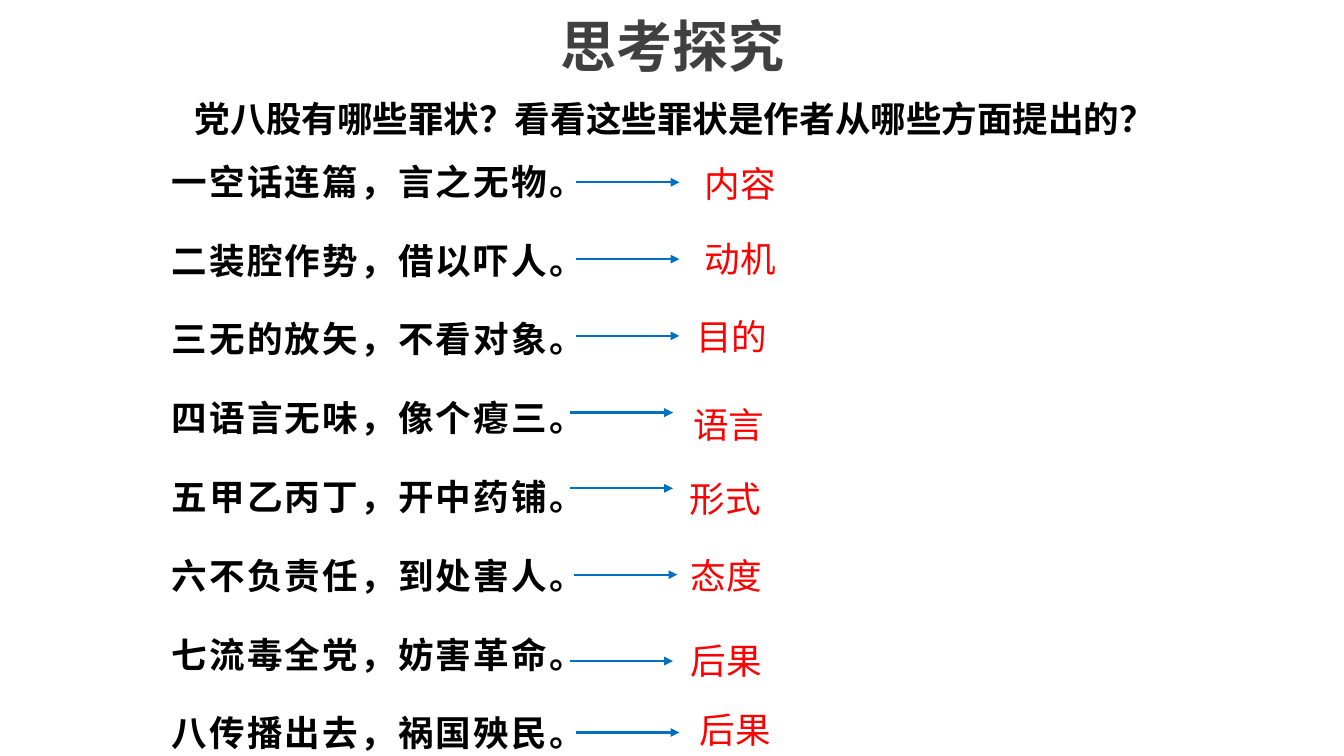
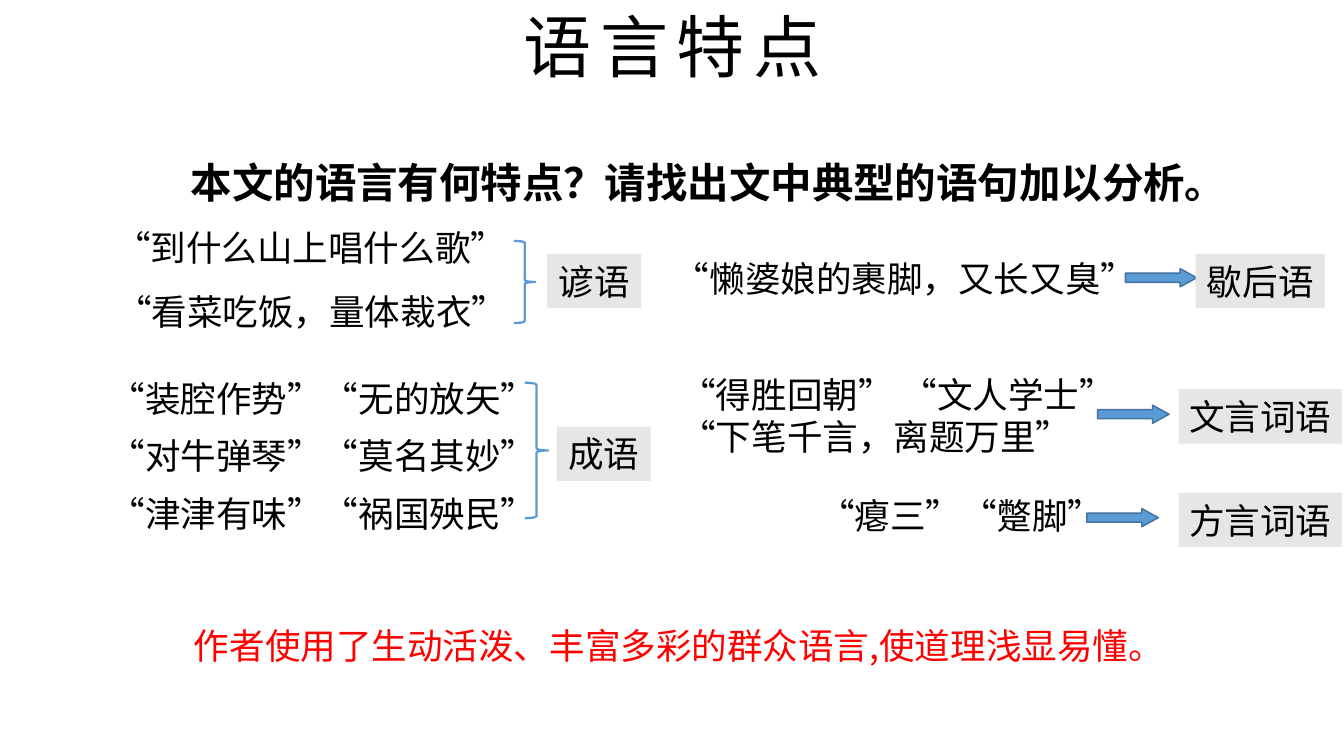
from lxml import etree
from pptx import Presentation
from pptx.dml.color import RGBColor
from pptx.enum.lang import MSO_LANGUAGE_ID
from pptx.enum.shapes import MSO_CONNECTOR, MSO_SHAPE
from pptx.enum.text import MSO_ANCHOR, PP_ALIGN
from pptx.oxml.ns import qn
from pptx.util import Inches, Pt

CJK = "Noto Sans CJK SC"
BLACK, RED, GREY = "000000", "FF0000", "404040"
LABEL_FILL, LINE_BLUE = "E7E6E6", "0070C0"
SHAPE_BLUE, SHAPE_EDGE = "5B9BD5", "43739E"
LEFT, CENTER = PP_ALIGN.LEFT, PP_ALIGN.CENTER
TOP, MIDDLE = MSO_ANCHOR.TOP, MSO_ANCHOR.MIDDLE
RECT, ARROW, BRACE = MSO_SHAPE.RECTANGLE, MSO_SHAPE.RIGHT_ARROW, MSO_SHAPE.RIGHT_BRACE
STRAIGHT = MSO_CONNECTOR.STRAIGHT
CHINESE = MSO_LANGUAGE_ID.SIMPLIFIED_CHINESE
LINE_H = 0.51


def rgb(value):
    """Turn a hex string into a colour."""
    return RGBColor.from_string(value)


class Deck:
    """Holds the shared style and the current slide."""

    def __init__(self):
        """Open an empty presentation of the right size."""
        self.prs = Presentation()
        self.prs.slide_width, self.prs.slide_height = Inches(12.6), Inches(7.09)
        self.s = None

    def slide(self, title, **style):
        """Start a slide and put its title on top."""
        self.s = self.prs.slides.add_slide(self.prs.slide_layouts[6])
        self.text(0.87, 0, 10.87, 0.85, [title], align=CENTER, **style)

    def fill_text(self, sp, lines, size=24, color=BLACK, bold=False, font=CJK,
                  align=LEFT, anchor=MIDDLE, spacing=None, after=0, indent=0, track=0):
        """Fill a shape with one paragraph per line."""
        tf = sp.text_frame
        tf.vertical_anchor = anchor
        for i, line in enumerate(lines):
            p = tf.paragraphs[0] if i == 0 else tf.add_paragraph()
            p.text, p.alignment = line, align
            p.space_after = Pt(after)
            if spacing:
                p.line_spacing = Pt(spacing)
            if indent:
                p._p.get_or_add_pPr().set("indent", str(Inches(indent)))
            f = p.font
            f.name, f.size, f.bold, f.language_id = font, Pt(size), bold, CHINESE
            f.color.rgb = rgb(color)
            props = f._element
            etree.SubElement(props, qn("a:ea")).set("typeface", CJK)
            if track:
                props.set("spc", str(int(track * 100)))

    def text(self, x, y, w, h, lines, **style):
        """Add a wrapping text box."""
        sp = self.s.shapes.add_textbox(Inches(x), Inches(y), Inches(w), Inches(h))
        sp.text_frame.word_wrap = True
        self.fill_text(sp, lines, **style)

    def shape(self, kind, x, y, w, h, fill=None, line=None, width=1):
        """Add a preset shape without a shadow."""
        sp = self.s.shapes.add_shape(kind, Inches(x), Inches(y), Inches(w), Inches(h))
        sp.shadow.inherit = False
        if fill:
            sp.fill.solid()
            sp.fill.fore_color.rgb = rgb(fill)
        else:
            sp.fill.background()
        if line:
            sp.line.color.rgb = rgb(line)
            sp.line.width = Pt(width)
        else:
            sp.line.fill.background()
        return sp

    def label(self, x, y, w, text):
        """Add a grey category label."""
        sp = self.shape(RECT, x, y, w, LINE_H, LABEL_FILL)
        sp.text_frame.word_wrap = False
        self.fill_text(sp, [text], align=CENTER)

    def block_arrow(self, x, y):
        """Add a solid arrow pointing right."""
        sp = self.shape(ARROW, x, y, 0.67, 0.17, SHAPE_BLUE, SHAPE_EDGE)
        sp.adjustments[0], sp.adjustments[1] = 0.5, 0.91

    def brace(self, x, y, w, h):
        """Add a right brace."""
        self.shape(BRACE, x, y, w, h, line=SHAPE_BLUE, width=1.5)

    def line_arrow(self, x, y, length):
        """Add a thin horizontal arrow."""
        c = self.s.shapes.add_connector(
            STRAIGHT, Inches(x), Inches(y), Inches(x + length), Inches(y))
        c.line.color.rgb = rgb(LINE_BLUE)
        c.line.width = Pt(1.5)
        etree.SubElement(c.line._get_or_add_ln(), qn("a:tailEnd")).set("type", "triangle")
        etree.SubElement(c._element.spPr, qn("a:effectLst"))


def charges_slide(d):
    """Build the slide that pairs each charge with its aspect."""
    d.slide("思考探究", size=37.8, color=GREY, bold=True, font="Times New Roman")
    d.text(1.73, 0.85, 9.34, LINE_H,
           ["党八股有哪些罪状？看看这些罪状是作者从哪些方面提出的？"], bold=True)
    charges = [
        ("一空话连篇，言之无物。", 5.4, 1.71, "内容", 6.51, 1.46),
        ("二装腔作势，借以吓人。", 5.4, 2.43, "动机", 6.51, 2.17),
        ("三无的放矢，不看对象。", 5.4, 3.15, "目的", 6.43, 2.9),
        ("四语言无味，像个瘪三。", 5.34, 3.87, "语言", 6.4, 3.72),
        ("五甲乙丙丁，开中药铺。", 5.34, 4.58, "形式", 6.37, 4.42),
        ("六不负责任，到处害人。", 5.38, 5.39, "态度", 6.38, 5.14),
        ("七流毒全党，妨害革命。", 5.34, 6.2, "后果", 6.38, 5.94),
        ("八传播出去，祸国殃民。", 5.4, 6.87, "后果", 6.46, 6.58),
    ]
    d.text(1.51, 1.25, 4.2, 5.84, [row[0] for row in charges], bold=True,
           anchor=TOP, spacing=43.2, after=10, track=1.5)
    for _, arrow_x, arrow_y, aspect, x, y in charges:
        d.line_arrow(arrow_x, arrow_y, 0.97)
        d.text(x, y, 1, LINE_H, [aspect], color=RED)


def language_slide(d):
    """Build the slide that sorts phrases by kind."""
    d.slide("语言特点", size=45.9, font="Arial", track=6)
    d.text(1.69, 1.3, 10.04, 0.81,
           ["本文的语言有何特点？请找出文中典型的语句加以分析。"],
           size=28, bold=True, font="Times New Roman")

    d.text(0.98, 2.06, 3.95, LINE_H, ["“到什么山上唱什么歌”"])
    d.text(0.99, 2.66, 3.95, LINE_H, ["“看菜吃饭，量体裁衣”"])
    d.text(0.43, 3.34, 5.66, 1.74,
           ["“装腔作势”“无的放矢”", "“对牛弹琴”“莫名其妙”", "“津津有味”“祸国殃民”"],
           anchor=TOP, spacing=39, indent=0.5)
    d.text(6.22, 2.35, 4.58, LINE_H, ["“懒婆娘的裹脚，又长又臭”"])
    d.text(6.28, 3.45, 4.45, 0.91, ["“得胜回朝” “文人学士”", "“下笔千言，离题万里”"],
           anchor=TOP, spacing=28.5)
    d.text(7.58, 4.58, 2.95, LINE_H, ["“瘪三”“蹩脚”"])

    d.brace(4.82, 2.26, 0.2, 0.77)
    d.brace(4.92, 3.59, 0.22, 1.27)
    for x, y in [(10.55, 2.52), (10.29, 3.8), (10.19, 4.77)]:
        d.block_arrow(x, y)
    for x, y, w, kind in [
        (5.13, 2.38, 0.88, "谚语"),
        (5.22, 4, 0.88, "成语"),
        (11.21, 2.38, 1.21, "歇后语"),
        (11.05, 3.65, 1.53, "文言词语"),
        (11.05, 4.62, 1.53, "方言词语"),
    ]:
        d.label(x, y, w, kind)

    d.text(1.72, 5.8, 9.52, LINE_H,
           ["作者使用了生动活泼、丰富多彩的群众语言,使道理浅显易懂。"], color=RED)


def main():
    """Build both slides and save the file."""
    d = Deck()
    charges_slide(d)
    language_slide(d)
    d.prs.save("out.pptx")


if __name__ == "__main__":
    main()
